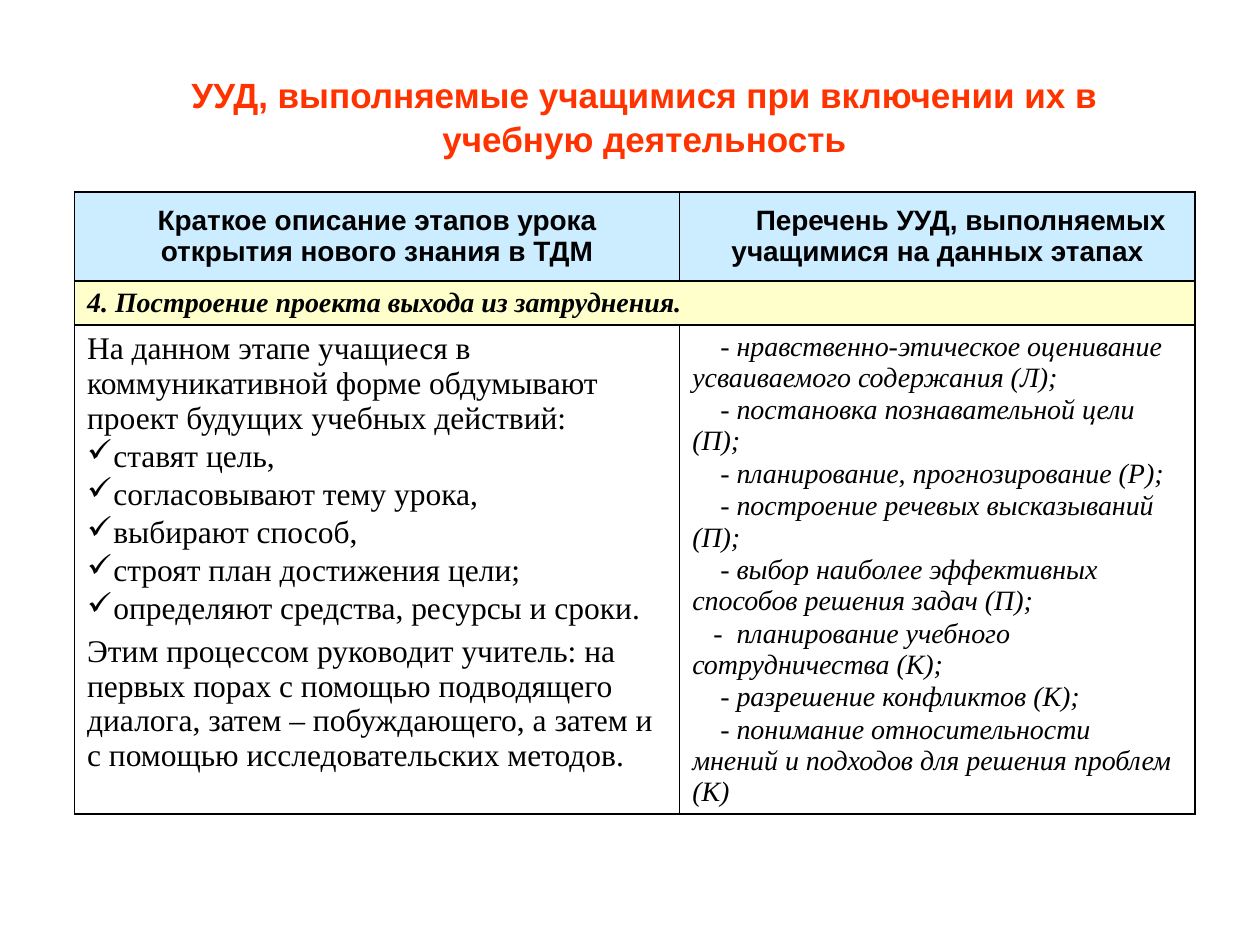
from pptx import Presentation
from pptx.util import Pt
from pptx.dml.color import RGBColor
from pptx.enum.text import PP_ALIGN, MSO_ANCHOR
from pptx.oxml import parse_xml
from pptx.oxml.ns import nsdecls
from lxml.etree import SubElement

SANS, SERIF = "Arial", "Times New Roman"
BLACK = "000000"
HEADS = [
    ["Краткое описание этапов урока", "открытия нового знания в ТДМ"],
    ["Перечень УУД, выполняемых учащимися на данных этапах"],
]
STAGE = "4. Построение проекта выхода из затруднения."
INTRO = ("На данном этапе учащиеся в коммуникативной форме обдумывают "
         "проект будущих учебных действий:")
STEPS = [
    "ставят цель,",
    "согласовывают тему урока,",
    "выбирают способ,",
    "строят план достижения цели;",
    "определяют средства, ресурсы и сроки.",
]
CLOSE = ("Этим процессом руководит учитель: на первых порах с помощью "
         "подводящего диалога, затем – побуждающего, а затем и с помощью "
         "исследовательских методов.")
SKILLS = [
    "- нравственно-этическое оценивание усваиваемого содержания (Л);",
    "- постановка познавательной цели (П);",
    "- планирование, прогнозирование (Р);",
    "- построение речевых высказываний (П);",
    "- выбор наиболее эффективных способов решения задач (П);",
    "-  планирование учебного сотрудничества (К);",
    "- разрешение конфликтов (К);",
    "- понимание относительности мнений и подходов для решения проблем (К)",
]


def color(code):
    """Turn a hex string into a colour."""
    return RGBColor.from_string(code)


def write(frame, text, size, face, ink=BLACK, bold=False, italic=False,
          align=PP_ALIGN.LEFT, before=0, left=0, indent=0, mark=None):
    """Add one styled paragraph to a text frame and return it."""
    para = frame.paragraphs[0] if not frame.text else frame.add_paragraph()
    para.add_run().text = text
    para.alignment = align
    para.space_before = Pt(before)
    props = para._p.get_or_add_pPr()
    props.set("marL", str(Pt(left)))
    props.set("indent", str(Pt(indent)))
    if mark:
        props.append(parse_xml(f'<a:buChar {nsdecls("a")} char="{mark}"/>'))
    font = para.font
    font.size, font.name = Pt(size), face
    font.bold, font.italic = bold, italic
    font.color.rgb = color(ink)
    return para


def dress(cell, fill):
    """Fill a cell and rule its four sides."""
    props = cell._tc.get_or_add_tcPr()
    for side in ("lnL", "lnR", "lnT", "lnB"):
        line = parse_xml(
            f'<a:{side} {nsdecls("a")} w="{Pt(1)}"><a:solidFill/></a:{side}>')
        SubElement(line[0], line[0].tag.replace("solidFill", "srgbClr"), val=BLACK)
        props.append(line)
    cell.fill.solid()
    cell.fill.fore_color.rgb = color(fill)


def add_title(slide, x, y, w, h):
    """Place the centred heading in its box."""
    frame = slide.shapes.add_textbox(Pt(x), Pt(y), Pt(w), Pt(h)).text_frame
    frame.word_wrap = True
    para = write(frame, "УУД, выполняемые учащимися при включении их в учебную "
                 "деятельность", 20, SANS, "FF3300", True, align=PP_ALIGN.CENTER)
    para.line_spacing = 1.05


def add_grid(slide, x, y, w, h):
    """Place the table of lesson stages and skills in its box."""
    table = slide.shapes.add_table(3, 2, Pt(x), Pt(y), Pt(w), Pt(h)).table
    wide, head, band = 0.54 * w, 51, 25
    for col, size in zip(table.columns, (wide, w - wide)):
        col.width = Pt(size)
    for row, size in zip(table.rows, (head, band, h - head - band)):
        row.height = Pt(size)
    for row, fill in zip(table.rows, ("CCECFF", "FFFFCC", "FFFFFF")):
        for cell in row.cells:
            dress(cell, fill)

    for col, (lines, indent) in enumerate(zip(HEADS, (0, 26.7))):
        cell = table.cell(0, col)
        cell.vertical_anchor = MSO_ANCHOR.MIDDLE
        for line in lines:
            write(cell.text_frame, line, 16, SANS, bold=True,
                  align=PP_ALIGN.CENTER, indent=indent)

    stage = table.cell(1, 0)
    stage.merge(table.cell(1, 1))
    write(stage.text_frame, STAGE, 16, SERIF, bold=True, italic=True)

    left, right = (table.cell(2, col).text_frame for col in (0, 1))
    write(left, INTRO, 18, SERIF, before=1.8)
    for step in STEPS:
        write(left, step, 18, SERIF, before=1.8, left=15, indent=-15, mark="✓")
    write(left, CLOSE, 18, SERIF, before=4.5)
    for skill in SKILLS:
        indent = 12 if skill.startswith("-  ") else 16
        write(right, skill, 16, SERIF, italic=True, before=0.8, indent=indent)


def main():
    """Build and save the slide."""
    deck = Presentation()
    deck.slide_width, deck.slide_height = Pt(720), Pt(540)
    slide = deck.slides.add_slide(deck.slide_layouts[6])
    add_grid(slide, 42.6, 109.7, 640.4, 355.5)
    add_title(slide, 76.3, 37.4, 584, 55.4)
    deck.save("out.pptx")


if __name__ == "__main__":
    main()
